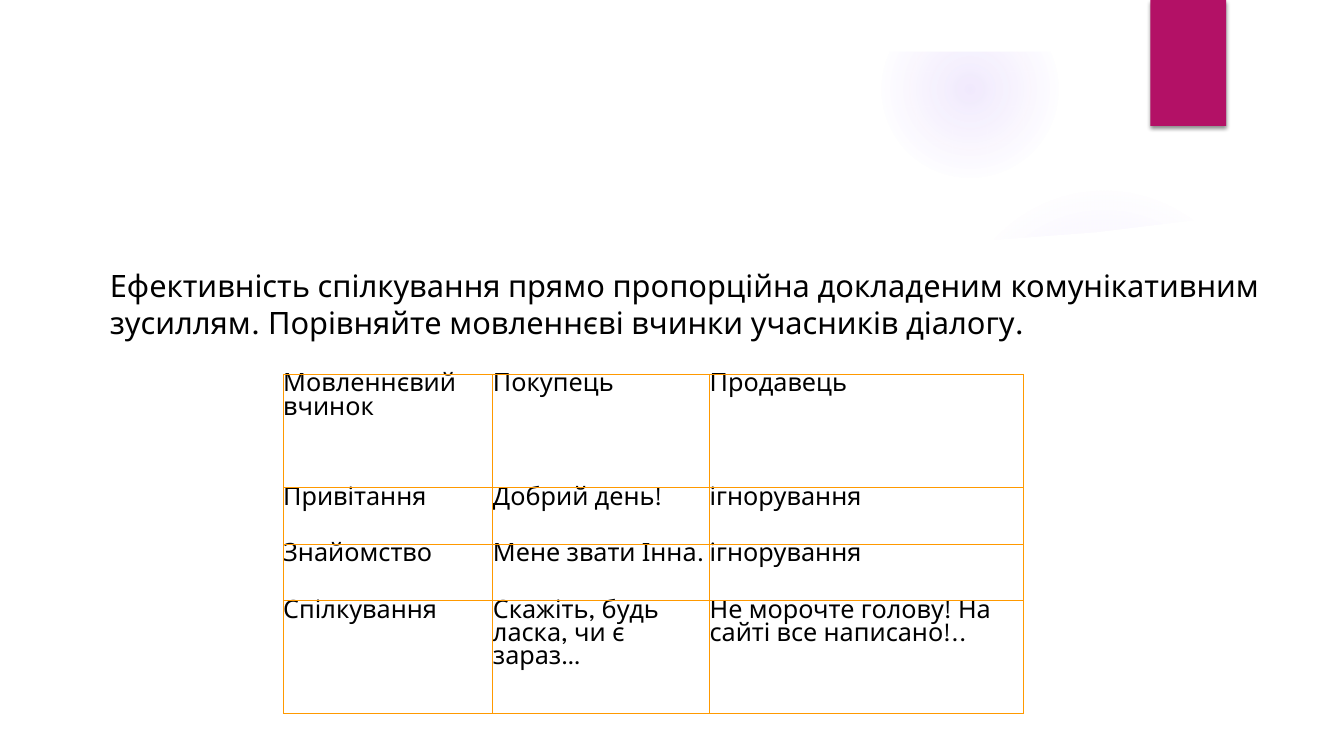
"""Builds a slide that compares the speech acts of a buyer and a seller."""
from lxml.etree import SubElement
from pptx import Presentation
from pptx.dml.color import RGBColor
from pptx.enum.shapes import MSO_SHAPE
from pptx.enum.text import MSO_ANCHOR, MSO_AUTO_SIZE, PP_ALIGN
from pptx.oxml import parse_xml
from pptx.oxml.ns import nsdecls, qn
from pptx.util import Pt

COLORS = {"white": "FFFFFF", "black": "000000", "violet": "9B6BF2",
          "magenta": "B31166", "orange": "FF9900"}


def write(frame, text, size=18, font="League Spartan", color="black"):
    """Puts one left-aligned, unbulleted paragraph in a text frame."""
    para = frame.paragraphs[0]
    properties = para._p.get_or_add_pPr()
    properties.set("marL", "0")
    properties.set("indent", "0")
    SubElement(properties, qn("a:buNone"))
    para.alignment = PP_ALIGN.LEFT
    para.line_spacing = 1.0
    para.space_before = Pt(0)
    span = para.add_run()
    span.text = text
    span.font.size = Pt(size)
    span.font.name = font
    span.font.color.rgb = RGBColor.from_string(COLORS[color])


def paint(shape, color):
    """Gives a shape a plain fill with no line and no shadow."""
    shape.shadow.inherit = False
    shape.line.fill.background()
    shape.fill.solid()
    shape.fill.fore_color.rgb = RGBColor.from_string(COLORS[color])


deck = Presentation()
deck.slide_width, deck.slide_height = Pt(960), Pt(540)
page = deck.slides.add_slide(deck.slide_layouts[1])
shapes = page.shapes
title = shapes.title._element
title.getparent().remove(title)

glows = [
    (677.5, 131.8, 221.8, [(0, 7), (36, 6), (69, 0)]),
    (630, 0.7, 126, [(0, 14), (36, 7), (73, 0)]),
]
for left, top, size, stops in glows:
    glow = shapes.add_shape(MSO_SHAPE.OVAL, Pt(left), Pt(top), Pt(size), Pt(size))
    paint(glow, "violet")
    stop_list = "".join(
        f'<a:gs pos="{position * 1000}"><a:srgbClr val="{COLORS["violet"]}">'
        f'<a:alpha val="{opacity * 1000}"/></a:srgbClr></a:gs>'
        for position, opacity in stops)
    gradient = parse_xml(
        f'<a:gradFill {nsdecls("a")} rotWithShape="1"><a:gsLst>{stop_list}</a:gsLst>'
        '<a:path path="circle"><a:fillToRect l="50000" t="50000" r="50000" b="50000"/>'
        '</a:path></a:gradFill>')
    properties = glow._element.spPr
    properties.replace(properties.find(qn("a:solidFill")), gradient)

wave_points = [
    (68, 151), (114.5, 157), (179, 163.5), (259, 170), (351, 175), (437, 178),
    (510, 178.6), (585, 177), (663, 174), (703, 172), (743, 169), (783, 165.6),
    (824, 161), (864, 156), (924, 147), (924, 504), (36, 504),
]
wave = shapes.build_freeform(36, 147, scale=Pt(1))
wave.add_line_segments(wave_points)
paint(wave.convert_to_shape(), "white")

frame = shapes.build_freeform(0, 0, scale=Pt(1))
frame.add_line_segments([(0, 540), (960, 540), (960, 0)])
frame.move_to(922.3, 502.6)
frame.add_line_segments([(922.3, 37.4), (37.4, 37.4), (37.4, 502.6)])
paint(frame.convert_to_shape(), "white")

ribbon = shapes.add_shape(MSO_SHAPE.RECTANGLE, Pt(821.8), Pt(0), Pt(54), Pt(90))
paint(ribbon, "magenta")
shadow = SubElement(ribbon._element.spPr.find(qn("a:effectLst")), qn("a:outerShdw"),
                    blurRad=str(Pt(3)), dist=str(Pt(2)), dir="5400000", rotWithShape="0")
shadow_color = SubElement(shadow, qn("a:srgbClr"), val=COLORS["black"])
SubElement(shadow_color, qn("a:alpha"), val="45000")

body = page.placeholders[1]
body.left, body.top, body.width, body.height = Pt(71.3), Pt(187.2), Pt(846.7), Pt(269.3)
body.text_frame.word_wrap = True
body.text_frame.auto_size = MSO_AUTO_SIZE.NONE
body.text_frame.vertical_anchor = MSO_ANCHOR.TOP
write(body.text_frame,
      "Ефективність спілкування прямо пропорційна докладеним комунікативним "
      "зусиллям. Порівняйте мовленнєві вчинки учасників діалогу.", size=22)
shapes._spTree.append(body._element)

speech_acts = [
    ("Мовленнєвий вчинок", "Покупець", "Продавець"),
    ("Привітання", "Добрий день!", "ігнорування"),
    ("Знайомство", "Мене звати Інна.", "ігнорування"),
    ("Спілкування", "Скажіть, будь ласка, чи є зараз…",
     "Не морочте голову! На сайті все написано!.."),
]
column_widths = [149.8, 154.8, 223.9]
row_heights = [80.9, 40.4, 40.4, 80.9]

table = shapes.add_table(4, 3, Pt(202.3), Pt(267.3),
                         Pt(sum(column_widths)), Pt(sum(row_heights))).table
table.first_row = table.horz_banding = False
for column, width in zip(table.columns, column_widths):
    column.width = Pt(width)
for row, height in zip(table.rows, row_heights):
    row.height = Pt(height)

for i, texts in enumerate(speech_acts):
    for j, text in enumerate(texts):
        cell = table.cell(i, j)
        cell.margin_left = cell.margin_right = cell.margin_top = cell.margin_bottom = Pt(0)
        write(cell.text_frame, text)
        for side in ("lnL", "lnR", "lnT", "lnB"):
            line = SubElement(cell._tc.get_or_add_tcPr(), qn(f"a:{side}"), w=str(Pt(0.75)))
            fill = SubElement(line, qn("a:solidFill"))
            SubElement(fill, qn("a:srgbClr"), val=COLORS["orange"])
        cell.fill.background()

deck.save("out.pptx")
